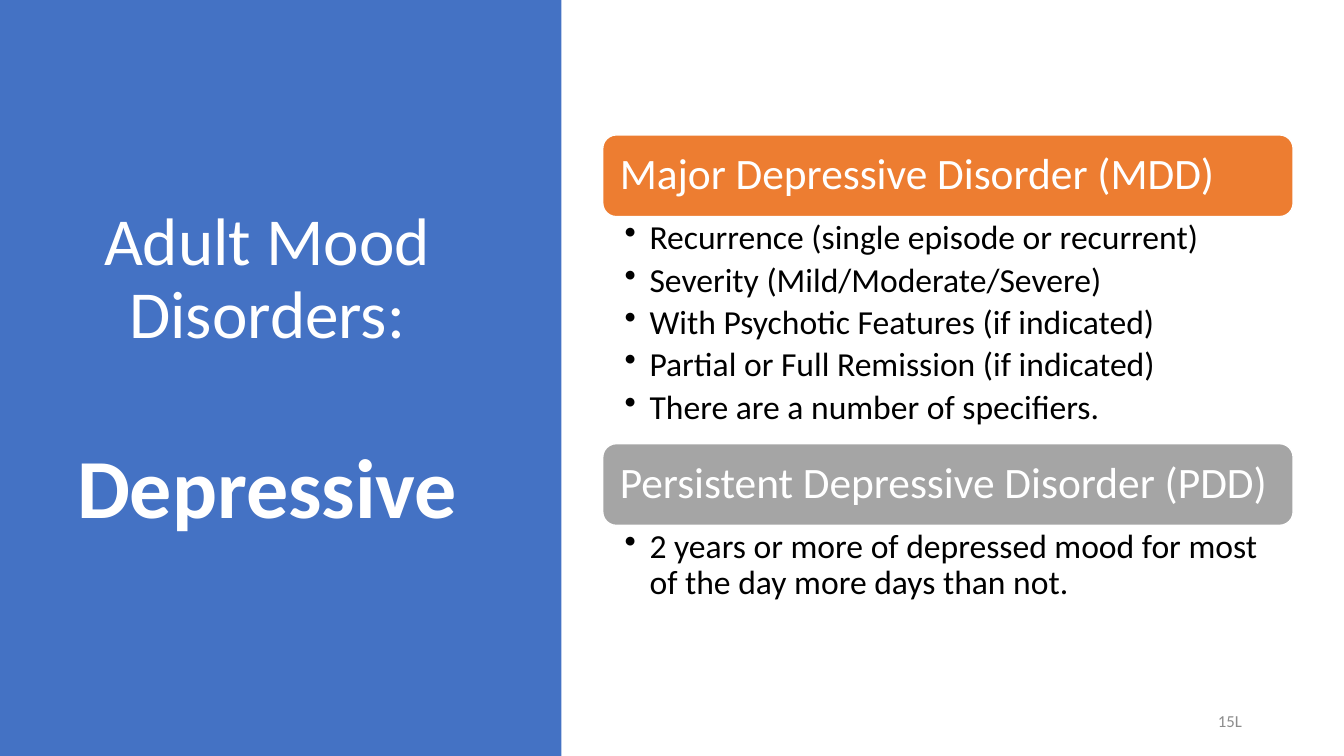
import pptx
import pptx.dml.color
import pptx.enum.shapes
import pptx.enum.text
import pptx.oxml.ns
import pptx.util
from lxml import etree

Cm, Pt = pptx.util.Cm, pptx.util.Pt
RGBColor = pptx.dml.color.RGBColor
SHAPES = pptx.enum.shapes.MSO_SHAPE
ALIGN = pptx.enum.text.PP_ALIGN
ANCHOR = pptx.enum.text.MSO_ANCHOR

BLUE = RGBColor(0x44, 0x72, 0xC4)
ORANGE = RGBColor(0xED, 0x7D, 0x31)
GRAY = RGBColor(0xA5, 0xA5, 0xA5)
PALE_GRAY = RGBColor(0x8C, 0x8C, 0x8C)
WHITE = RGBColor(0xFF, 0xFF, 0xFF)
BLACK = RGBColor(0x00, 0x00, 0x00)
FONT = "Calibri"

TOPIC = "Adult Mood Disorders:"
CATEGORY = "Depressive"
PAGE_LABEL = "15L"
# heading, heading colour, height of the details in cm, details
DISORDERS = [
    ("Major Depressive Disorder (MDD)", ORANGE, 5.72, [
        "Recurrence (single episode or recurrent)",
        "Severity (Mild/Moderate/Severe)",
        "With Psychotic Features (if indicated)",
        "Partial or Full Remission (if indicated)",
        "There are a number of specifiers.",
    ]),
    ("Persistent Depressive Disorder (PDD)", GRAY, 2.08, [
        "2 years or more of depressed mood for most of the day more days than not.",
    ]),
]

LIST_LEFT, LIST_TOP, LIST_WIDTH = 15.19, 3.4, 17.4
HEADING_HEIGHT = 2.06


def style(para, size, color, bold=False):
    for span in para.runs:
        span.font.name = FONT
        span.font.size = Pt(size)
        span.font.color.rgb = color
        span.font.bold = bold


def set_insets(frame, left, top, right, bottom):
    frame.margin_left, frame.margin_top = Cm(left), Cm(top)
    frame.margin_right, frame.margin_bottom = Cm(right), Cm(bottom)


def add_bullet(para):
    properties = para._p.get_or_add_pPr()
    properties.set("marL", str(Cm(0.63)))
    properties.set("indent", str(-Cm(0.63)))
    bullet = etree.SubElement(properties, pptx.oxml.ns.qn("a:buChar"))
    bullet.set("char", "•")


def add_block(page, kind, left, top, width, height, fill):
    block = page.shapes.add_shape(kind, Cm(left), Cm(top), Cm(width), Cm(height))
    block.shadow.inherit = False
    block.fill.solid()
    block.fill.fore_color.rgb = fill
    block.line.fill.background()
    return block


def add_text_box(page, left, top, width, height):
    box = page.shapes.add_textbox(Cm(left), Cm(top), Cm(width), Cm(height))
    box.text_frame.word_wrap = True
    return box.text_frame


def add_title(page):
    title = page.shapes.title
    panel = add_block(page, SHAPES.RECTANGLE, 0, 0, 14.15, 19.05, BLUE)
    title.element.addprevious(panel.element)
    title.left, title.top = Cm(1.45), Cm(1.73)
    title.width, title.height = Cm(10.57), Cm(15.29)
    frame = title.text_frame
    frame.text = f"{TOPIC}\n{CATEGORY}"
    frame.word_wrap = True
    frame.auto_size = pptx.enum.text.MSO_AUTO_SIZE.NONE
    frame.vertical_anchor = ANCHOR.MIDDLE
    topic, category = frame.paragraphs
    for para in (topic, category):
        para.alignment = ALIGN.CENTER
        para.line_spacing = 0.9
    category.space_before = Pt(66)
    style(topic, 48, WHITE)
    style(category, 60, WHITE, bold=True)


def add_heading(page, top, text, color):
    heading = add_block(page, SHAPES.ROUNDED_RECTANGLE, LIST_LEFT, top,
                        LIST_WIDTH, HEADING_HEIGHT, color)
    heading.line.color.rgb = WHITE
    heading.line.width = Pt(1)
    frame = heading.text_frame
    frame.text = text
    frame.word_wrap = True
    frame.vertical_anchor = ANCHOR.MIDDLE
    set_insets(frame, 0.33, 0.33, 0.33, 0.33)
    para = frame.paragraphs[0]
    para.alignment = ALIGN.LEFT
    para.line_spacing = 0.9
    style(para, 31, WHITE)


def add_details(page, top, height, details):
    frame = add_text_box(page, LIST_LEFT, top, LIST_WIDTH, height)
    frame.text = "\n".join(details)
    set_insets(frame, 0.55, 0.1, 0.61, 0.1)
    for para in frame.paragraphs:
        para.line_spacing = 0.9
        para.space_after = Pt(4.4)
        add_bullet(para)
        style(para, 24, BLACK)


def add_page_label(page):
    frame = add_text_box(page, 23.93, 17.65, 7.62, 1.02)
    frame.text = PAGE_LABEL
    frame.vertical_anchor = ANCHOR.MIDDLE
    frame.paragraphs[0].alignment = ALIGN.RIGHT
    style(frame.paragraphs[0], 12, PALE_GRAY)


def main():
    deck = pptx.Presentation()
    deck.slide_width, deck.slide_height = Cm(33.87), Cm(19.05)
    page = deck.slides.add_slide(deck.slide_layouts.get_by_name("Title Only"))
    add_title(page)
    top = LIST_TOP
    for heading, color, height, details in DISORDERS:
        add_heading(page, top, heading, color)
        add_details(page, top + HEADING_HEIGHT, height, details)
        top += HEADING_HEIGHT + height
    add_page_label(page)
    deck.save("out.pptx")


if __name__ == "__main__":
    main()
